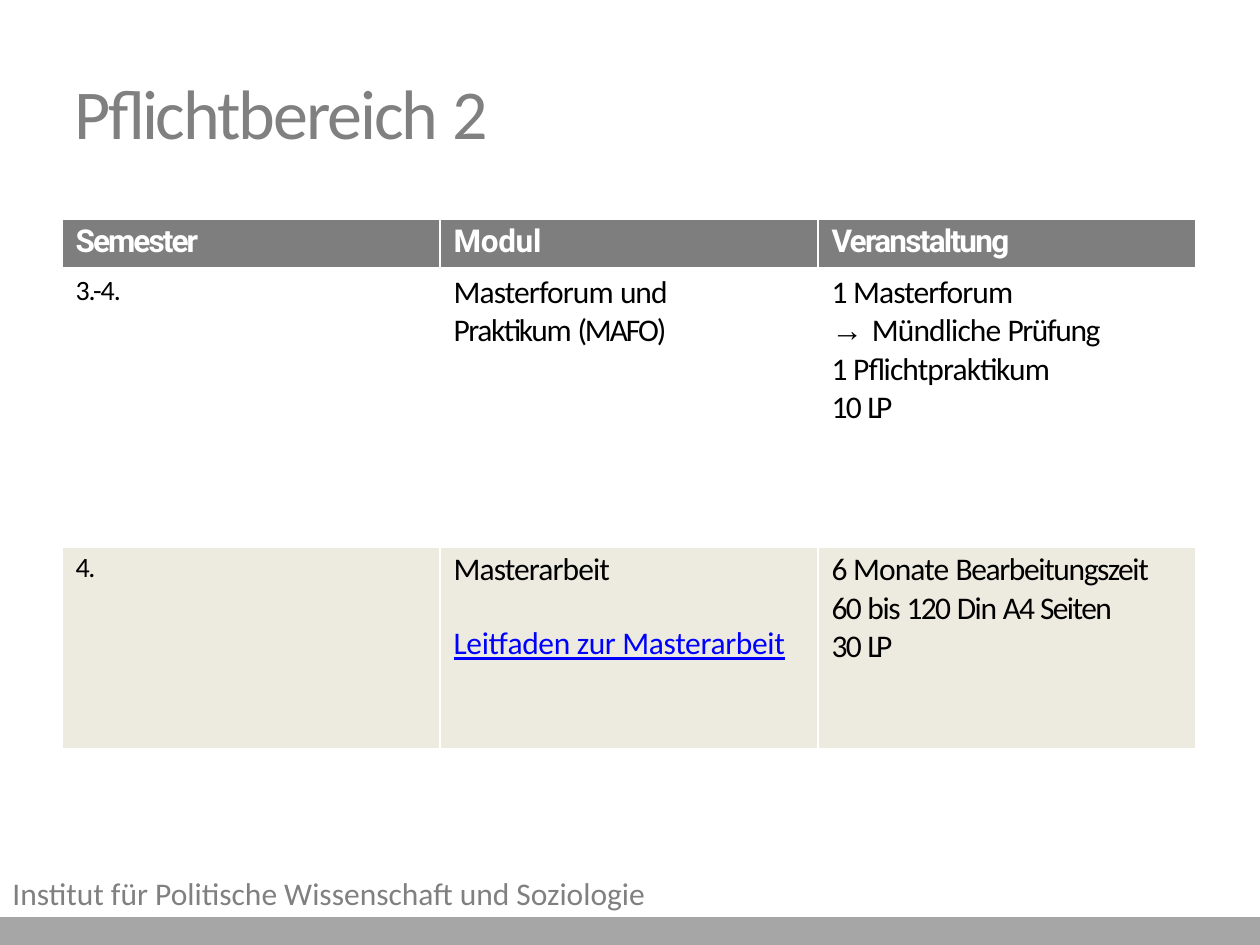
from lxml.etree import SubElement
from pptx import Presentation
from pptx.dml.color import RGBColor
from pptx.enum.shapes import MSO_SHAPE as Shape
from pptx.enum.text import MSO_ANCHOR as Anchor, MSO_AUTO_SIZE as Auto, PP_ALIGN as Align
from pptx.oxml.ns import qn
from pptx.util import Inches, Pt

WIDE, HIGH = 10, 7.5
GRAY, HEAD, BAR, SAND = "808080", "7E7E7E", "A6A6A6", "EDEBE0"
WHITE, BLACK, BLUE = "FFFFFF", "000000", "0000FF"
COLS, ROWS = [3, 3, 3], [0.4, 2.2, 1.6]

# A cell is a list of lines, a line a list of (text, letter spacing in points).
HEADS = [[[("Semester", -1.1)]], [[("Modul", -0.2)]], [[("Veranstaltung", -1)]]]
FORUM = [
    [[("3.-4.", -0.6)]],
    [[("Masterforum ", -0.5), ("und", -0.6)],
     [("Praktikum ", -0.8), ("(MAFO)", -1.2)]],
    [[("1 ", -0.9), ("Masterforum", -0.5)],
     [("→ ", 0), ("Mündliche ", -0.5), ("Prüfung", -0.8)],
     [("1 ", -0.9), ("Pflichtpraktikum", -0.5)],
     [("10 ", -0.9), ("LP", -2.6)]],
]
THESIS = [
    [[("4.", -0.7)]],
    [[("Masterarbeit", -0.5)], [("Leitfaden zur Masterarbeit", -0.2)]],
    [[("6 ", -0.9), ("Monate ", -0.5), ("Bearbeitungszeit", -0.8)],
     [("60 ", -0.9), ("bis ", -0.8), ("120 ", -0.9), ("Din ", -0.8),
      ("A4 ", -1.2), ("Seiten", -0.9)],
     [("30 ", -0.9), ("LP", -2.6)]],
]


def rgb(code):
    return RGBColor.from_string(code)


def place(x, y, w, h):
    return [Inches(n) for n in (x, y, w, h)]


def add_run(para, text, size, color, space=0, font="Calibri", bold=False):
    run = para.add_run()
    run.text = text
    run.font.name, run.font.size, run.font.bold = font, Pt(size), bold
    run.font.color.rgb = rgb(color)
    run._r.get_or_add_rPr().set("spc", str(round(space * 100)))
    return run


def add_title(slide):
    title = slide.shapes.title
    title.left, title.top, title.width, title.height = place(0.59, 0.54, 3.54, 0.69)
    frame = title.text_frame
    frame.margin_left = frame.margin_right = frame.margin_top = frame.margin_bottom = 0
    frame.vertical_anchor, frame.auto_size = Anchor.MIDDLE, Auto.NONE
    para = frame.paragraphs[0]
    para.alignment = Align.LEFT
    add_run(para, "Pflichtbereich ", 40, GRAY, -1.2)
    add_run(para, "2", 40, GRAY, -2)


def add_footer(slide):
    bar = slide.shapes.add_shape(Shape.RECTANGLE, *place(0, 7.29, WIDE, 0.21))
    bar.shadow.inherit = False
    bar.fill.solid()
    bar.fill.fore_color.rgb = bar.line.color.rgb = rgb(BAR)
    bar.line.width = Pt(2)
    box = slide.shapes.add_textbox(*place(0, 6.89, 7.09, 0.4))
    box.text_frame.word_wrap = True
    add_run(box.text_frame.paragraphs[0],
            "Institut für Politische Wissenschaft und Soziologie", 18, GRAY)


def set_edges(cell, top, bottom):
    props = cell._tc.get_or_add_tcPr()
    for side, width in (("L", 1), ("R", 1), ("T", top), ("B", bottom)):
        line = SubElement(props, qn("a:ln" + side), w=str(Pt(width)))
        fill = SubElement(line, qn("a:solidFill"))
        SubElement(fill, qn("a:srgbClr"), val=WHITE)


def fill_cell(cell, lines, row, col):
    set_edges(cell, 3 if row == 1 else 1, 3 if row == 0 else 1)
    if row == 1:
        cell.fill.background()
    else:
        cell.fill.solid()
        cell.fill.fore_color.rgb = rgb(SAND if row else HEAD)
    cell.margin_left, cell.margin_top = Inches(0.11), Inches(0.03)
    cell.margin_right = cell.margin_bottom = 0
    size = 16 if row and col == 0 else 18
    frame = cell.text_frame
    for i, line in enumerate(lines):
        para = frame.add_paragraph() if i else frame.paragraphs[0]
        for text, space in line:
            link = text.startswith("Leitfaden")
            color = BLUE if link else BLACK if row else WHITE
            font = "Arial" if "→" in text else "Calibri" if row else "Roboto"
            run = add_run(para, text, size, color, space, font, row == 0)
            if link:
                run.font.underline = True
                para.space_before = Pt(20.5)


def add_plan(slide):
    spot = place(0.49, 1.74, sum(COLS), sum(ROWS))
    table = slide.shapes.add_table(len(ROWS), len(COLS), *spot).table
    table.horz_banding = False
    for col, width in zip(table.columns, COLS):
        col.width = Inches(width)
    for r, cells in enumerate((HEADS, FORUM, THESIS)):
        table.rows[r].height = Inches(ROWS[r])
        for c, lines in enumerate(cells):
            fill_cell(table.cell(r, c), lines, r, c)


def main():
    deck = Presentation()
    deck.slide_width, deck.slide_height = Inches(WIDE), Inches(HIGH)
    slide = deck.slides.add_slide(deck.slide_layouts[5])
    add_footer(slide)
    add_title(slide)
    add_plan(slide)
    deck.save("out.pptx")


if __name__ == "__main__":
    main()
